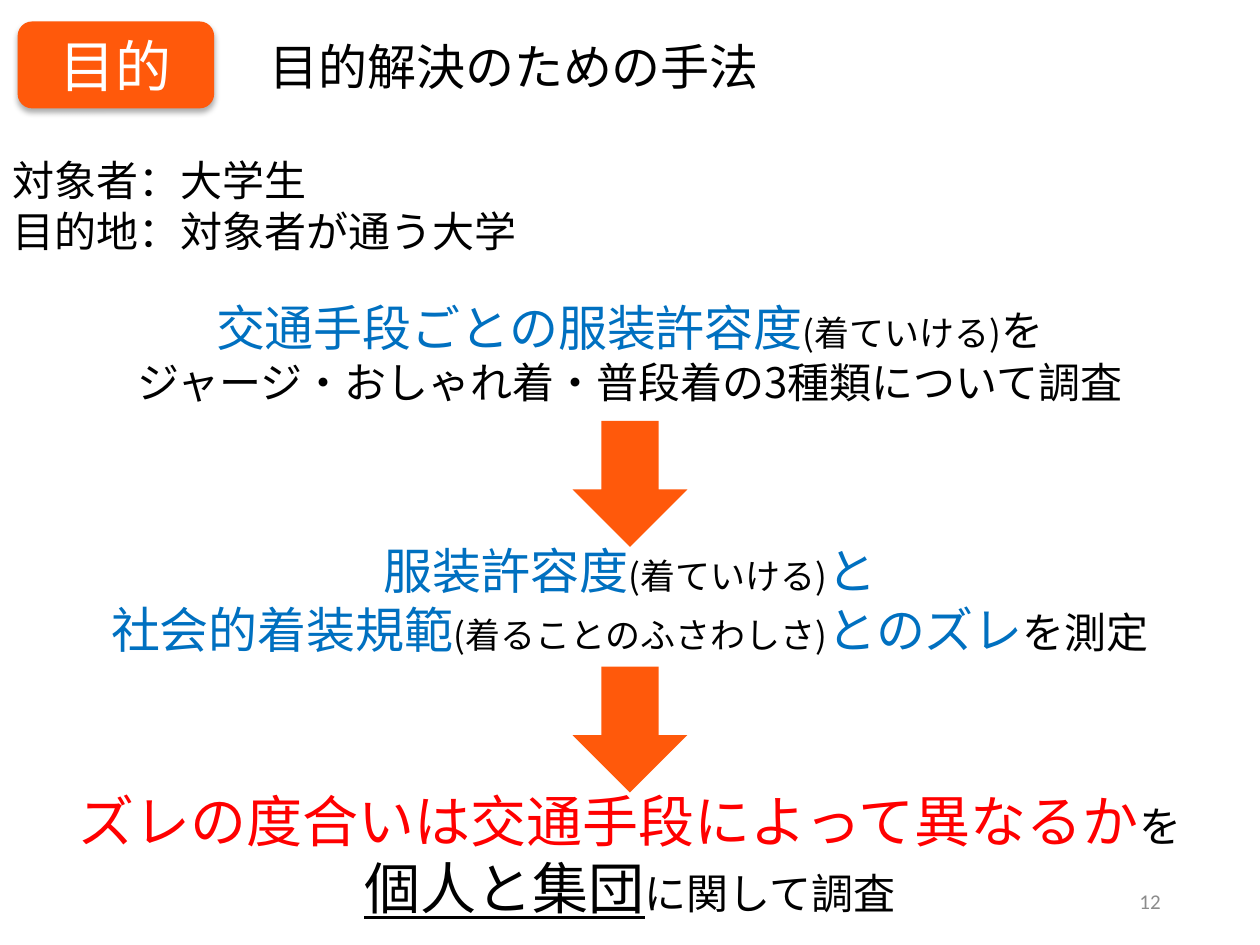
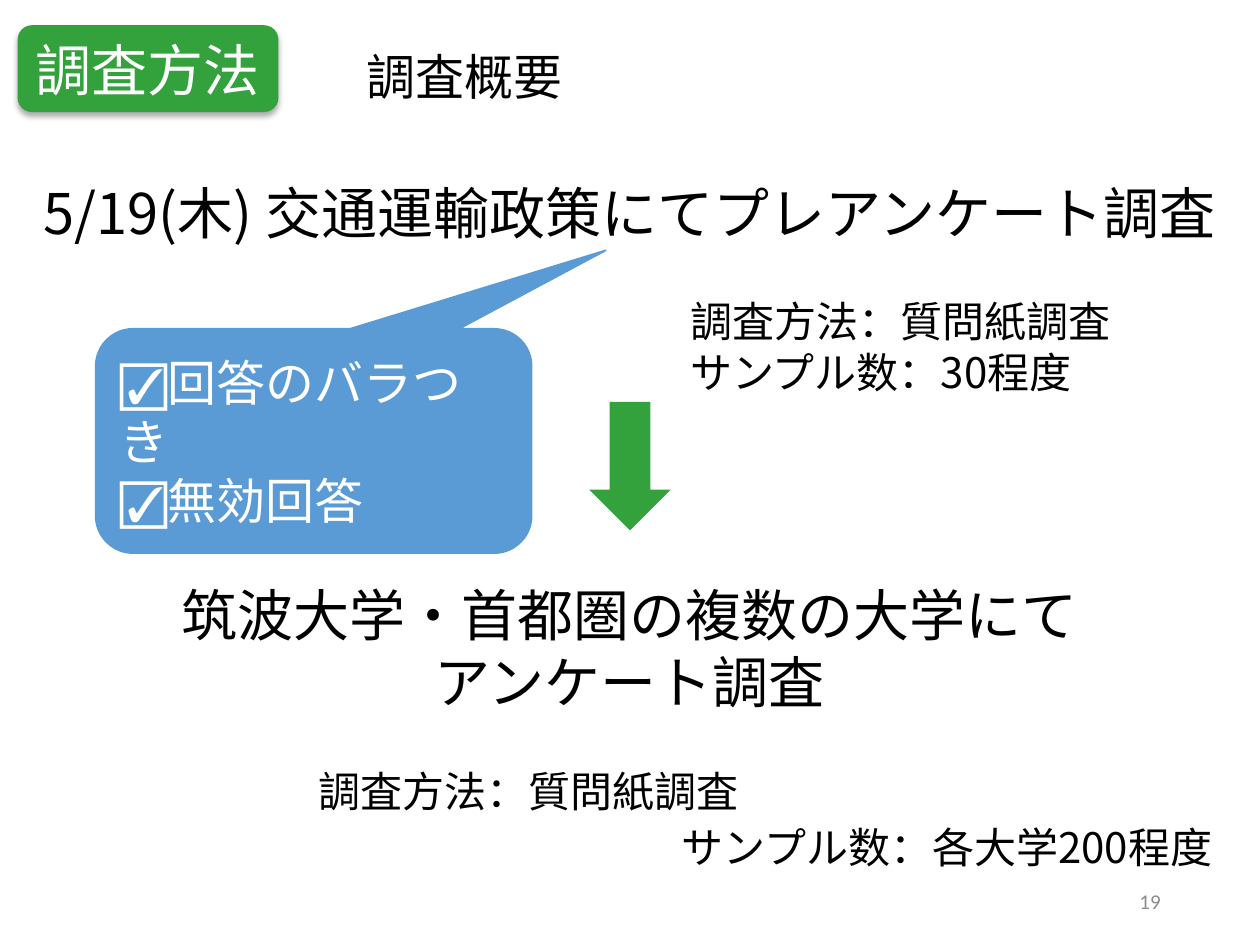
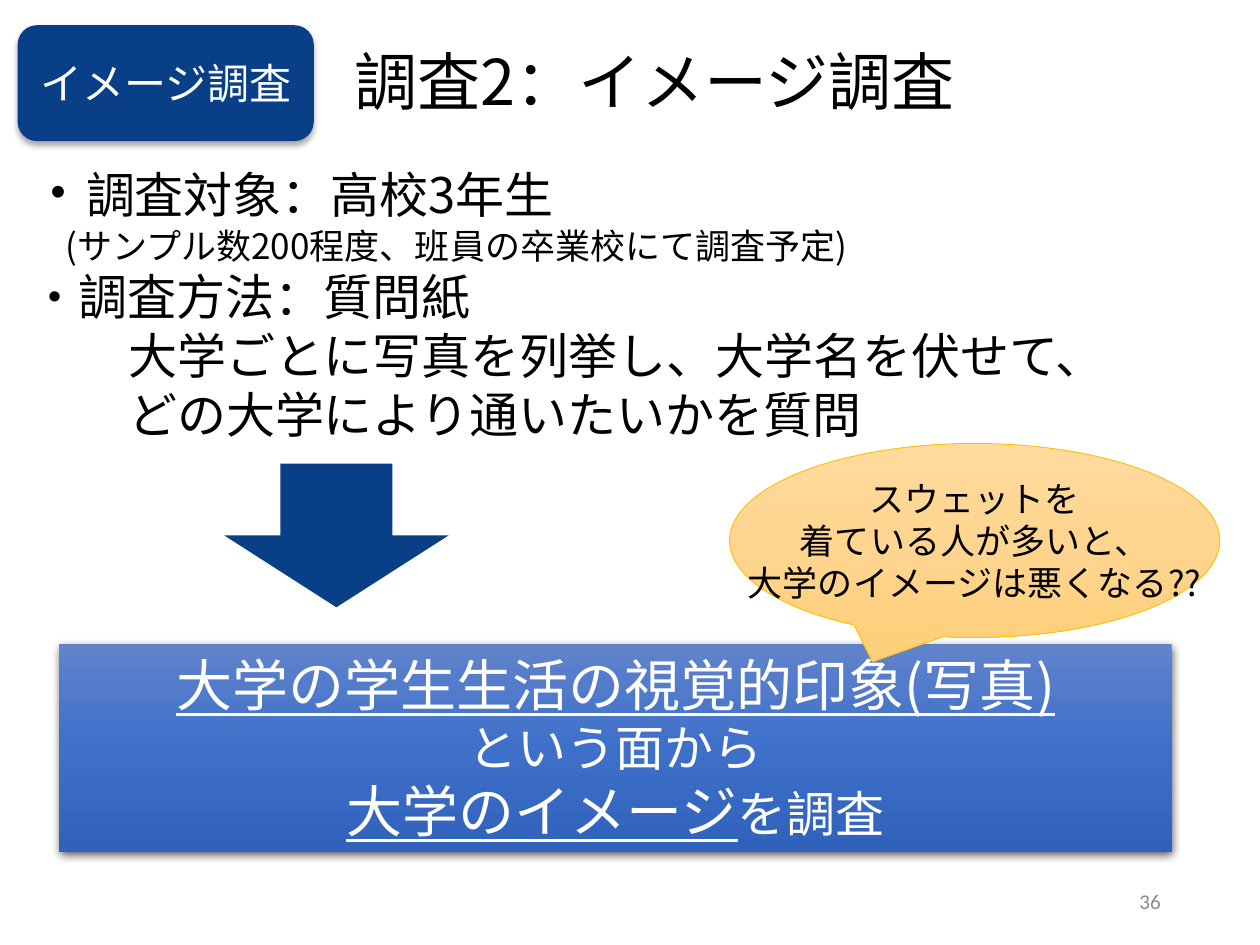
from copy import deepcopy
from dataclasses import dataclass

from lxml.etree import SubElement
from pptx import Presentation
from pptx.dml.color import RGBColor
from pptx.enum.shapes import MSO_SHAPE
from pptx.enum.text import MSO_ANCHOR, PP_ALIGN
from pptx.oxml.ns import qn
from pptx.util import Inches, Pt


@dataclass(frozen=True)
class Theme:
    font: str = "Noto Sans CJK JP"
    latin: str = "Calibri"
    black: str = "000000"
    white: str = "FFFFFF"
    gray: str = "8C8C8C"
    orange: str = "FF590B"
    green: str = "33A23D"
    navy: str = "093F86"
    key: str = "0070C0"
    red: str = "FF0000"
    sky: str = "5B9BD5"
    gold: str = "FFC000"
    blue_fade: tuple = ("6183CB", "3E70CA", "3062BB")
    gold_fade: tuple = ("FFDB9E", "FFD590", "FFD07C")
    page: int = 12
    note: int = 20
    body: int = 24
    lead: int = 28
    big: int = 32
    title: int = 36
    leading: float = 1.2


T = Theme()
LEFT, CENTER, RIGHT = PP_ALIGN.LEFT, PP_ALIGN.CENTER, PP_ALIGN.RIGHT


@dataclass(frozen=True)
class Span:
    text: str
    size: int = T.body
    color: str = T.black
    underline: bool = False
    font: str = T.font


def add_span(paragraph, span):
    run = paragraph.add_run()
    run.text = span.text
    run.font.size = Pt(span.size)
    run.font.color.rgb = RGBColor.from_string(span.color)
    run.font.underline = span.underline
    run.font.name = span.font
    SubElement(run.font._element, qn("a:ea"), typeface=T.font)


def write(frame, lines, align=LEFT, anchor=MSO_ANCHOR.TOP, wrap=True, inset=0.1, indents=()):
    frame.word_wrap = wrap
    frame.vertical_anchor = anchor
    frame.margin_left = frame.margin_right = Inches(inset)
    frame.margin_top = frame.margin_bottom = Inches(inset / 2)
    for number, spans in enumerate(lines):
        paragraph = frame.add_paragraph() if number else frame.paragraphs[0]
        paragraph.alignment = align
        paragraph.line_spacing = Pt(round(T.leading * max(span.size for span in spans), 1))
        if number < len(indents):
            paragraph._p.get_or_add_pPr().set("marL", str(Inches(indents[number])))
        for span in spans:
            add_span(paragraph, span)


def add_text(slide, box, lines, **layout):
    write(slide.shapes.add_textbox(*map(Inches, box)).text_frame, lines, **layout)


def add_figure(slide, preset, box, fill, line=None, line_width=1.0):
    figure = slide.shapes.add_shape(preset, *map(Inches, box))
    figure.shadow.inherit = False
    if isinstance(fill, tuple):
        fade(figure, fill)
    else:
        figure.fill.solid()
        figure.fill.fore_color.rgb = RGBColor.from_string(fill)
    if line:
        figure.line.color.rgb = RGBColor.from_string(line)
        figure.line.width = Pt(line_width)
    else:
        figure.line.fill.background()
    return figure


def fade(figure, colors):
    figure.fill.gradient()
    figure.fill.gradient_angle = 270
    stop_list = figure._element.spPr.find(qn("a:gradFill")).find(qn("a:gsLst"))
    stop_list.insert(1, deepcopy(stop_list[0]))
    for number, (stop, color) in enumerate(zip(figure.fill.gradient_stops, colors)):
        stop.color.rgb = RGBColor.from_string(color)
        stop.position = number / (len(colors) - 1)


def cast_shadow(figure, opacity, blur, distance):
    effects = figure._element.spPr.find(qn("a:effectLst"))
    shadow = SubElement(effects, qn("a:outerShdw"), blurRad=str(Pt(blur)),
                        dist=str(Pt(distance)), dir="5400000", rotWithShape="0")
    color = SubElement(shadow, qn("a:srgbClr"), val=T.black)
    SubElement(color, qn("a:alpha"), val=str(opacity * 1000))


def add_tag(slide, text, top, width, height, color, size=T.big):
    tag = add_figure(slide, MSO_SHAPE.ROUNDED_RECTANGLE, (0.14, top, width, height), color)
    cast_shadow(tag, 32, 3.5, 2.2)
    write(tag.text_frame, [[Span(text, size, T.white)]], CENTER, MSO_ANCHOR.MIDDLE)


def add_down_arrow(slide, center, top, width, height, color):
    add_figure(slide, MSO_SHAPE.DOWN_ARROW, (center - width / 2, top, width, height), color)


def add_page_number(slide, number):
    add_text(slide, (7.06, 6.95, 2.25, 0.4),
             [[Span(str(number), T.page, T.gray, font=T.latin)]],
             align=RIGHT, anchor=MSO_ANCHOR.MIDDLE)


def build_purpose(slide):
    add_tag(slide, "目的", 0.17, 1.56, 0.69, T.orange)
    add_text(slide, (2.04, 0.24, 4.18, 0.57), [[Span("目的解決のための手法", T.lead)]])
    add_text(slide, (0, 1.18, 4.3, 0.91),
             [[Span("対象者：大学生")], [Span("目的地：対象者が通う大学")]])
    wearable = Span("(着ていける)", T.note)
    steps = [
        (2.31, 0.98, [
            [Span("交通手段ごとの服装許容度", T.lead, T.key), wearable, Span("を")],
            [Span("ジャージ・おしゃれ着・普段着の3種類について調査")]]),
        (4.24, 1.04, [
            [Span("服装許容度", T.lead, T.key), wearable, Span("と", T.lead, T.key)],
            [Span("社会的着装規範", T.lead, T.key), Span("(着ることのふさわしさ)", T.note),
             Span("とのズレ", T.lead, T.key), Span("を測定")]]),
        (6.19, 1.18, [
            [Span("ズレの度合いは交通手段によって異なるか", T.big, T.red), Span("を")],
            [Span("個人と集団", T.big, underline=True), Span("に関して調査")]]),
    ]
    for top, height, lines in steps:
        add_text(slide, (0, top, 10, height), lines, align=CENTER)
    for top in (3.34, 5.29):
        add_down_arrow(slide, 5, top, 0.91, 1, T.orange)
    add_page_number(slide, 12)


def build_method(slide):
    add_tag(slide, "調査方法", 0.2, 2.07, 0.69, T.green)
    add_text(slide, (2.81, 0.32, 2.83, 0.57), [[Span("調査概要", T.lead)]])
    add_text(slide, (0, 1.38, 10, 0.62),
             [[Span("5/19(木) 交通運輸政策にてプレアンケート調査", T.big)]],
             align=CENTER, inset=0.07)
    questionnaire = Span("調査方法：質問紙調査")
    add_text(slide, (5.38, 2.3, 4.4, 0.9), [[questionnaire], [Span("サンプル数：30程度")]])
    add_down_arrow(slide, 5, 3.19, 0.65, 1.02, T.green)
    add_text(slide, (0, 4.57, 10, 1.15),
             [[Span("筑波大学・首都圏の複数の大学にて", T.big)], [Span("アンケート調査", T.big)]],
             align=CENTER, inset=0.07)
    add_text(slide, (2.43, 6.03, 4, 0.5), [[questionnaire]])
    add_text(slide, (5.31, 6.47, 4.69, 0.5), [[Span("サンプル数：各大学200程度")]])
    add_page_number(slide, 19)
    checks = add_figure(slide, MSO_SHAPE.ROUNDED_RECTANGULAR_CALLOUT,
                        (0.76, 2.61, 3.46, 1.78), T.sky, T.sky)
    checks.adjustments[0] = 0.67
    checks.adjustments[1] = -0.85
    write(checks.text_frame,
          [[Span(text, T.lead, T.white, font=T.latin)]
           for text in ("☑回答のバラつき", "☑無効回答")],
          anchor=MSO_ANCHOR.MIDDLE)


def build_image_survey(slide):
    add_tag(slide, "イメージ調査", 0.2, 2.35, 0.92, T.navy, T.body)
    add_text(slide, (2.49, 0.29, 5.41, 0.71), [[Span("調査2：イメージ調査", T.title)]],
             align=CENTER)
    add_page_number(slide, 36)
    add_text(slide, (0.14, 1.2, 9.86, 2.46), [
        [Span("・", T.big), Span("調査対象：高校3年生", T.lead)],
        [Span("(サンプル数200程度、班員の卒業校にて調査予定)", T.note)],
        [Span("・調査方法：質問紙", T.lead)],
        [Span("大学ごとに写真を列挙し、大学名を伏せて、", T.lead)],
        [Span("どの大学により通いたいかを質問", T.lead)],
    ], indents=(0, 0.28, 0, 0.78, 0.78))
    conclusion = add_figure(slide, MSO_SHAPE.RECTANGLE, (0.47, 5.11, 8.83, 1.65), T.blue_fade)
    cast_shadow(conclusion, 63, 4.5, 1.5)
    write(conclusion.text_frame, [
        [Span("大学の学生生活の視覚的印象(写真)", T.big, T.white, True)],
        [Span("という面から", T.lead, T.white)],
        [Span("大学のイメージ", T.big, T.white, True), Span("を調査", T.lead, T.white)],
    ], CENTER)
    add_down_arrow(slide, 2.67, 3.68, 1.78, 1.14, T.navy)
    question = add_figure(slide, MSO_SHAPE.OVAL_CALLOUT, (5.79, 3.52, 3.89, 1.54),
                          T.gold_fade, T.gold, 0.5)
    write(question.text_frame,
          [[Span(text, T.note)] for text in
           ("スウェットを", "着ている人が多いと、", "大学のイメージは悪くなる??")],
          CENTER, MSO_ANCHOR.MIDDLE, wrap=False, inset=0)


def main():
    deck = Presentation()
    deck.slide_width, deck.slide_height = Inches(10), Inches(7.5)
    for build in (build_purpose, build_method, build_image_survey):
        build(deck.slides.add_slide(deck.slide_layouts[6]))
    deck.save("out.pptx")


if __name__ == "__main__":
    main()
